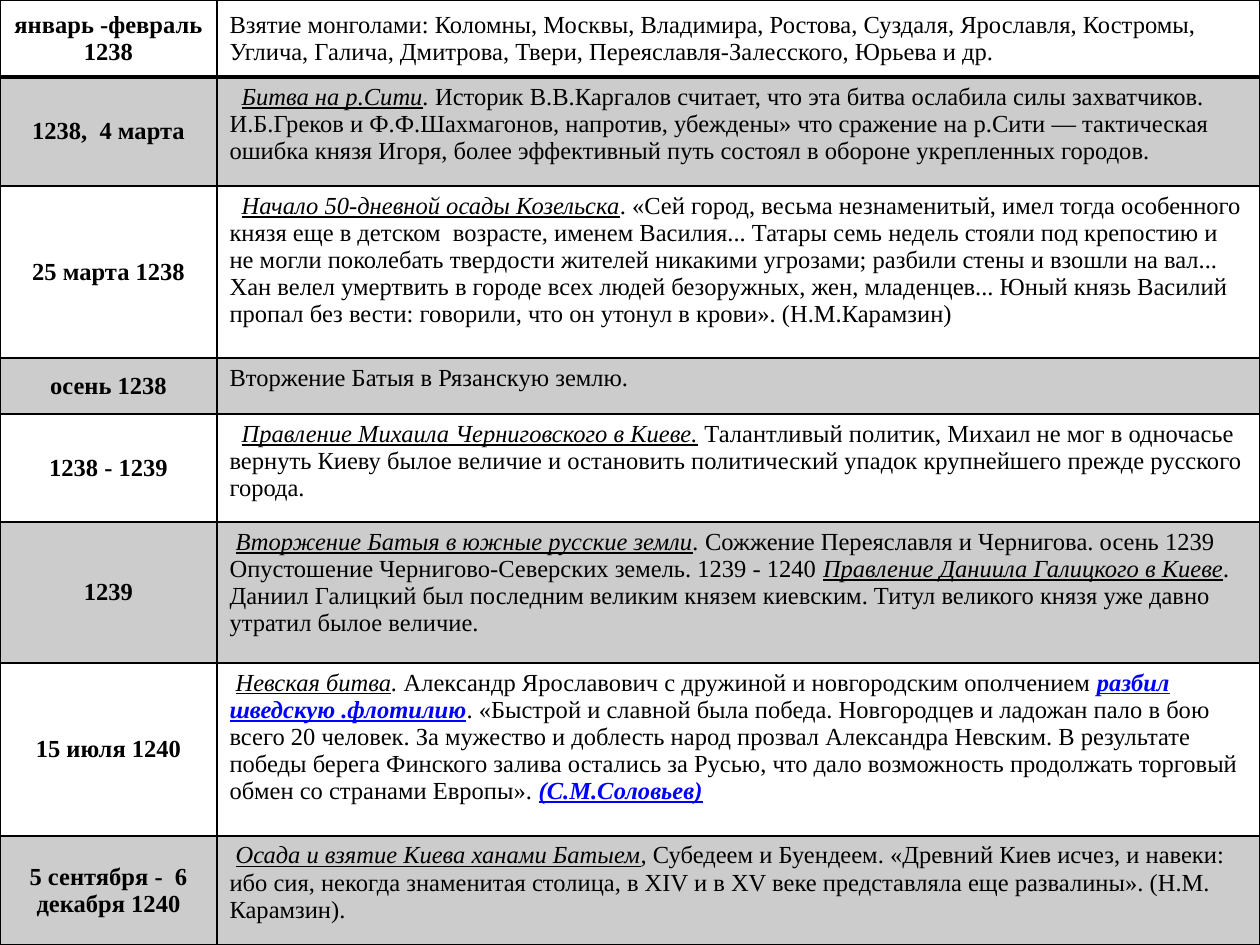
import dataclasses
import enum

import lxml.etree
import pptx
import pptx.dml.color
import pptx.enum.text
import pptx.oxml.ns
import pptx.table
import pptx.text.text
import pptx.util

BLACK = pptx.dml.color.RGBColor(0x00, 0x00, 0x00)
BLUE = pptx.dml.color.RGBColor(0x00, 0x00, 0xFF)
FONT = "Times New Roman"
SIZE = pptx.util.Pt(14)
SHADE = 20  # percent of black in every second row
WIDE, HIGH = 1260, 945
COLS = (217, 1043)
GAP = 6  # one step of first-line indent

MID = pptx.enum.text.MSO_ANCHOR.MIDDLE
TOP = pptx.enum.text.MSO_ANCHOR.TOP
CENTER = pptx.enum.text.PP_ALIGN.CENTER
LEFT = pptx.enum.text.PP_ALIGN.LEFT


class Style(enum.Enum):
    """Bold, italic, underline, colour."""
    PLAIN = (False, False, False, BLACK)
    DATE = (True, False, False, BLACK)
    SLANT = (False, True, False, BLACK)
    LEAD = (False, True, True, BLACK)
    MARK = (True, True, True, BLUE)


@dataclasses.dataclass
class Span:
    text: str
    style: Style = Style.PLAIN


@dataclasses.dataclass
class Event:
    date: str
    high: int
    spans: list[Span]
    indent: int = 0
    anchor: pptx.enum.text.MSO_ANCHOR = TOP
    base: int = 1  # bottom line width in points


EVENTS = [
    Event("январь -февраль 1238", 77, [
        Span("Взятие монголами: Коломны, Москвы, Владимира, Ростова, Суздаля, "
             "Ярославля, Костромы, Углича, Галича, Дмитрова, Твери, "
             "Переяславля-Залесского, Юрьева и др."),
    ], anchor=MID, base=2),
    Event("1238,  4 марта", 109, [
        Span("Битва на р.Сити", Style.LEAD),
        Span(".", Style.SLANT),
        Span(" Историк В.В.Каргалов считает, что эта битва ослабила силы "
             "захватчиков. И.Б.Греков и Ф.Ф.Шахмагонов, напротив, убеждены» что "
             "сражение на р.Сити — тактическая ошибка князя Игоря, более "
             "эффективный путь состоял в обороне укрепленных городов."),
    ], 2 * GAP),
    Event("25 марта 1238", 172, [
        Span("Начало 50-дневной осады Козельска", Style.LEAD),
        Span(". «Сей город, весьма незнаменитый, имел тогда особенного князя еще "
             "в детском  возрасте, именем Василия... Татары семь недель стояли "
             "под крепостию и не могли поколебать твердости жителей никакими "
             "угрозами; разбили стены и взошли на вал... Хан велел умертвить в "
             "городе всех людей безоружных, жен, младенцев... Юный князь Василий "
             "пропал без вести: говорили, что он утонул в крови». "
             "(Н.М.Карамзин)"),
    ], 2 * GAP),
    Event("осень 1238", 56, [Span("Вторжение Батыя в Рязанскую землю.")]),
    Event("1238 - 1239", 108, [
        Span("Правление Михаила Черниговского в Киеве.", Style.LEAD),
        Span(" Талантливый политик, Михаил не мог в одночасье вернуть Киеву былое "
             "величие и остановить политический упадок крупнейшего прежде "
             "русского города."),
    ], 2 * GAP),
    Event("1239", 141, [
        Span("Вторжение Батыя в южные русские земли", Style.LEAD),
        Span(".", Style.SLANT),
        Span(" Сожжение Переяславля и Чернигова. осень 1239 Опустошение "
             "Чернигово-Северских земель. 1239 - 1240 "),
        Span("Правление Даниила Галицкого в Киеве", Style.LEAD),
        Span(".", Style.SLANT),
        Span(" Даниил Галицкий был последним великим князем киевским. Титул "
             "великого князя уже давно утратил былое величие."),
    ], GAP),
    Event("15 июля 1240", 173, [
        Span("Невская битва", Style.LEAD),
        Span(".", Style.SLANT),
        Span(" Александр Ярославович с дружиной и новгородским ополчением "),
        Span("разбил шведскую .флотилию", Style.MARK),
        Span(". «Быстрой и славной была победа. Новгородцев и ладожан пало в бою "
             "всего 20 человек. За мужество и доблесть народ прозвал Александра "
             "Невским. В результате победы берега Финского залива остались за "
             "Русью, что дало возможность продолжать торговый обмен со странами "
             "Европы». "),
        Span("(С.М.Соловьев)", Style.MARK),
    ], GAP),
    Event("5 сентября -  6 декабря 1240", 109, [
        Span("Осада и взятие Киева ханами Батыем", Style.LEAD),
        Span(", ", Style.SLANT),
        Span("Субедеем и Буендеем. «Древний Киев исчез, и навеки: ибо сия, "
             "некогда знаменитая столица, в XIV и в XV веке представляла еще "
             "развалины». (Н.М. Карамзин)."),
    ], GAP),
]


def px(count: int) -> pptx.util.Emu:
    return pptx.util.Emu(round(count * 914400 / 126))


def add_node(parent: lxml.etree.ElementBase, tag: str, **attrs: str):
    return lxml.etree.SubElement(parent, pptx.oxml.ns.qn(tag), attrs)


def rule(cell: pptx.table._Cell, base: int) -> None:
    """Draw the four borders; they must come before the fill."""
    props = cell._tc.get_or_add_tcPr()
    for side, width in (("L", 1), ("R", 1), ("T", 1), ("B", base)):
        line = add_node(props, f"a:ln{side}", w=str(pptx.util.Pt(width)))
        add_node(add_node(line, "a:solidFill"), "a:srgbClr", val=str(BLACK))


def shade(cell: pptx.table._Cell, dark: bool) -> None:
    if not dark:
        cell.fill.background()
        return
    cell.fill.solid()
    cell.fill.fore_color.rgb = BLACK
    color = cell._tc.tcPr.find(".//" + pptx.oxml.ns.qn("a:solidFill")
                               + "[last()]/" + pptx.oxml.ns.qn("a:srgbClr"))
    for color in cell._tc.tcPr.findall(
            pptx.oxml.ns.qn("a:solidFill") + "/" + pptx.oxml.ns.qn("a:srgbClr")):
        add_node(color, "a:alpha", val=str(SHADE * 1000))


def write(para: pptx.text.text._Paragraph, spans: list[Span]) -> None:
    for span in spans:
        run = para.add_run()
        run.text = span.text
        font = run.font
        font.name, font.size = FONT, SIZE
        font.bold, font.italic, font.underline, font.color.rgb = span.style.value


def fill_row(table: pptx.table.Table, index: int, event: Event) -> None:
    table.rows[index].height = px(event.high)
    date, story = table.cell(index, 0), table.cell(index, 1)
    for cell in (date, story):
        rule(cell, event.base)
        shade(cell, index % 2 == 1)

    # Date
    date.vertical_anchor = MID
    para = date.text_frame.paragraphs[0]
    para.alignment = CENTER
    write(para, [Span(event.date, Style.DATE)])

    # Story
    story.vertical_anchor = event.anchor
    para = story.text_frame.paragraphs[0]
    para.alignment = LEFT
    props = para._p.get_or_add_pPr()
    props.set("marL", "0")
    props.set("indent", str(px(event.indent)))
    write(para, event.spans)


def main() -> None:
    deck = pptx.Presentation()
    deck.slide_width, deck.slide_height = px(WIDE), px(HIGH)
    slide = deck.slides.add_slide(deck.slide_layouts[6])

    # Table of events
    frame = slide.shapes.add_table(len(EVENTS), len(COLS), 0, 0, px(WIDE), px(HIGH))
    table = frame.table
    table.first_row = table.horz_banding = False
    for column, width in zip(table.columns, COLS):
        column.width = px(width)
    for index, event in enumerate(EVENTS):
        fill_row(table, index, event)

    deck.save("out.pptx")


if __name__ == "__main__":
    main()
